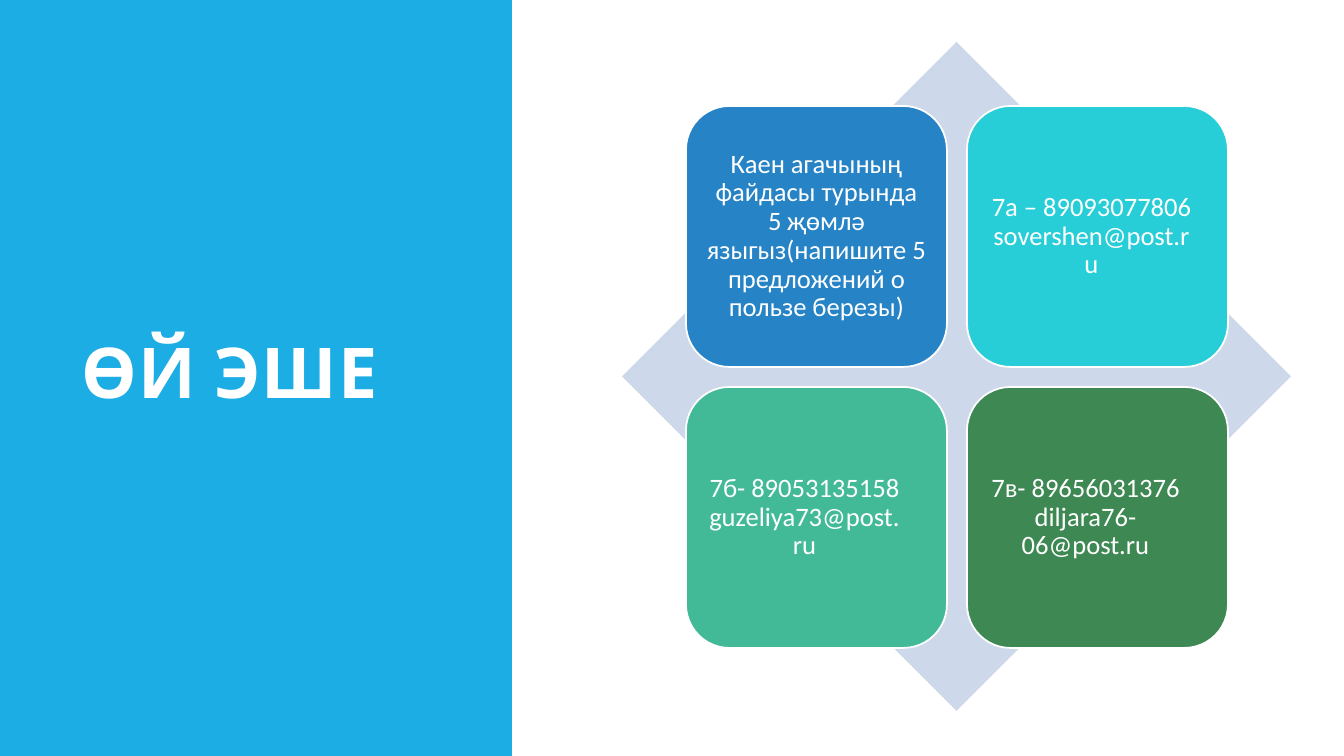
from pptx import Presentation
from pptx import util as u
from pptx.dml.color import RGBColor
from pptx.enum import shapes, text

PX = 9071
WHITE = "FFFFFF"
TITLE = "ӨЙ ЭШЕ"
CARDS = [
    ("2683C6", [("Каен агачының файдасы турында 5 җөмлә языгыз(напишите 5 предложений о пользе березы)", 0)]),
    ("27CED7", [("7а – 89093077806", 12), ("sovershen@post.ru", 0)]),
    ("42BA97", [("7б- 89053135158", 24), ("guzeliya73@post.ru", 0)]),
    ("3E8853", [("7в- 89656031376", 24), ("diljara76-06@post.ru", 0)]),
]
CARD_LEFT, CARD_TOP, CARD_SIZE, CARD_GAP = 686, 106, 261, 20


def px(value):
    return u.Emu(value * PX)


def color(value):
    return RGBColor.from_string(value)


def add_panel(kind, left, top, width, height, fill, line=None):
    panel = page.shapes.add_shape(kind, px(left), px(top), px(width), px(height))
    panel.shadow.inherit = False
    panel.fill.solid()
    panel.fill.fore_color.rgb = color(fill)
    if line:
        panel.line.color.rgb = color(line)
        panel.line.width = u.Pt(1.25)
    else:
        panel.line.fill.background()
    return panel


def write(box, lines, size, font, align, spacing, inset_x, inset_y, bold=False, tracking=0):
    frame = box.text_frame
    frame.word_wrap = True
    frame.vertical_anchor = text.MSO_ANCHOR.MIDDLE
    frame.margin_left = frame.margin_right = px(inset_x)
    frame.margin_top = frame.margin_bottom = px(inset_y)
    for index, (words, right_margin) in enumerate(lines):
        para = frame.add_paragraph() if index else frame.paragraphs[0]
        para.alignment = align
        para.line_spacing = spacing
        if right_margin:
            para._p.get_or_add_pPr().set("marR", str(px(right_margin)))
        span = para.add_run()
        span.text = words
        span.font.name = font
        span.font.size = u.Pt(size)
        span.font.bold = bold
        span.font.color.rgb = color(WHITE)
        if tracking:
            span._r.get_or_add_rPr().set("spc", str(tracking))


deck = Presentation()
deck.slide_width, deck.slide_height = px(1344), px(756)
page = deck.slides.add_slide(deck.slide_layouts[6])

add_panel(shapes.MSO_SHAPE.RECTANGLE, 0, 0, 512, 756, "1CADE4")
title = page.shapes.add_textbox(px(71), px(71), px(377), px(614))
write(title, [(TITLE, 0)], 50, "Cabin", text.PP_ALIGN.LEFT, 0.8, 10, 5, bold=True, tracking=100)

add_panel(shapes.MSO_SHAPE.DIAMOND, 622, 42, 669, 669, "CDD9EA")
for index, (fill, lines) in enumerate(CARDS):
    row, column = divmod(index, 2)
    left = CARD_LEFT + column * (CARD_SIZE + CARD_GAP)
    top = CARD_TOP + row * (CARD_SIZE + CARD_GAP)
    card = add_panel(shapes.MSO_SHAPE.ROUNDED_RECTANGLE, left, top, CARD_SIZE, CARD_SIZE, fill, WHITE)
    write(card, lines, 19, "Calibri", text.PP_ALIGN.CENTER, 0.9, 8, 8)

deck.save("out.pptx")
